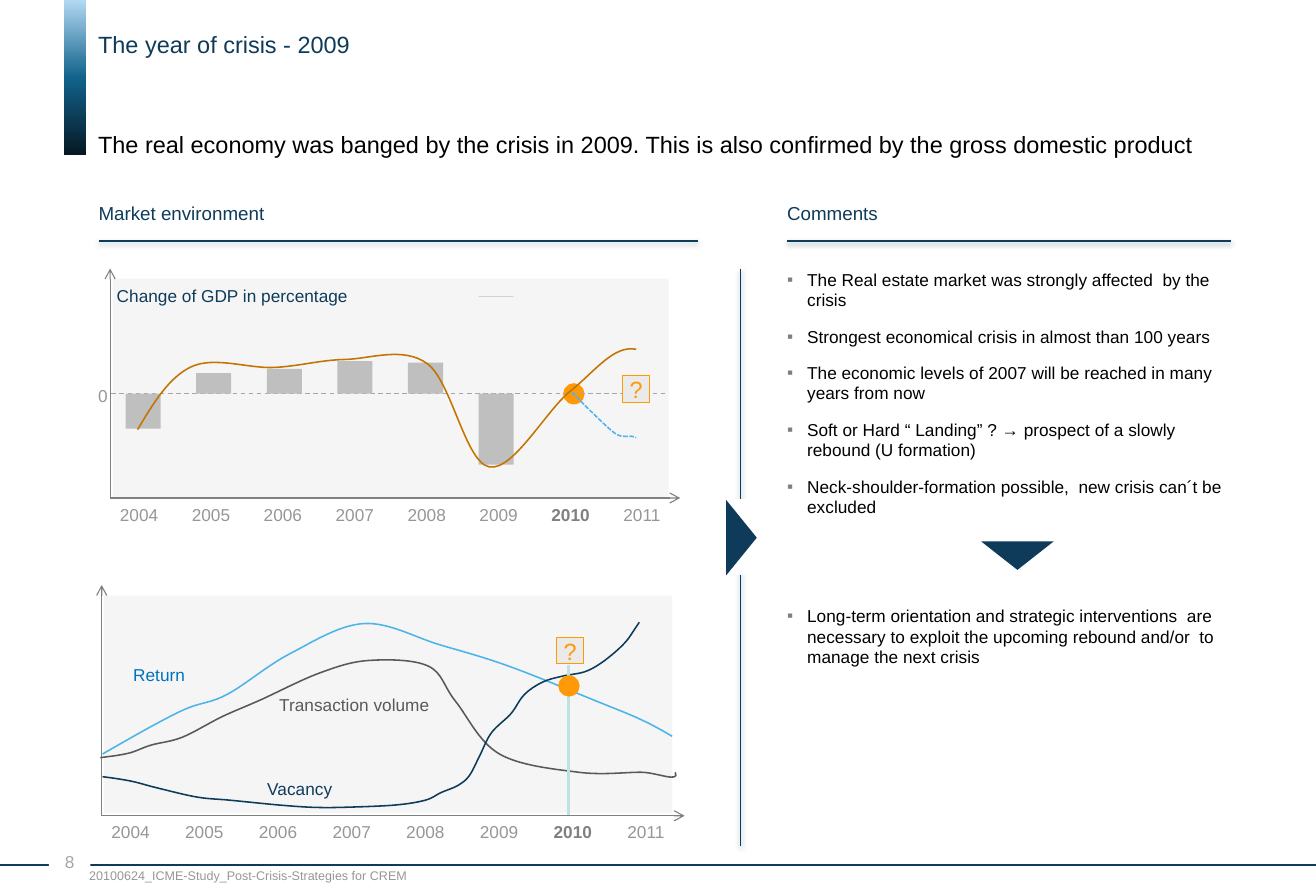
from copy import deepcopy

from lxml.etree import SubElement
from pptx import Presentation
from pptx.dml.color import RGBColor
from pptx.enum.dml import MSO_LINE
from pptx.enum.shapes import MSO_CONNECTOR, MSO_SHAPE
from pptx.enum.text import MSO_ANCHOR, PP_ALIGN
from pptx.oxml.ns import qn
from pptx.util import Cm, Pt

NAVY = RGBColor(0x0F, 0x3B, 0x5A)
BLACK = RGBColor(0, 0, 0)
WHITE = RGBColor(0xFF, 0xFF, 0xFF)
PANEL = RGBColor(0xF5, 0xF5, 0xF5)
BOX = RGBColor(0xEA, 0xEA, 0xEA)
BAR = RGBColor(0xBF, 0xBF, 0xBF)
ZERO_LINE = RGBColor(0xA6, 0xA6, 0xA6)
LABEL = RGBColor(0x96, 0x96, 0x96)
GREY = RGBColor(0x80, 0x80, 0x80)
DARK_GREY = RGBColor(0x59, 0x59, 0x59)
ORANGE = RGBColor(0xFF, 0x99, 0x05)
BROWN = RGBColor(0xC3, 0x73, 0x00)
SKY = RGBColor(0x4C, 0xB4, 0xE8)
BLUE = RGBColor(0x00, 0x72, 0xBD)
MINT = RGBColor(0xBD, 0xE3, 0xDE)
BAND = [(0, RGBColor(0xB3, 0xD8, 0xF2)), (0.5, RGBColor(0x12, 0x63, 0x8C)),
        (1, RGBColor(0x06, 0x18, 0x24))]

GDP_CHANGES = [-0.79, 0.46, 0.56, 0.73, 0.7, -1.6]
GDP_CURVE = [(3.1, 9.68), (4.32, 8.26), (6.17, 8.28), (7.77, 8.1), (9.63, 8.2),
             (11.02, 10.52), (12.85, 8.81), (14.33, 7.87)]
LANDING_CURVE = [(12.88, 8.84), (13.77, 9.7), (14.05, 9.83), (14.22, 9.83), (14.33, 9.86)]
RETURN_CURVE = [(2.31, 16.99), (4.06, 16.03), (5.11, 15.65), (6.53, 14.73), (8.2, 14.05),
                (9.91, 14.53), (11.46, 15.01), (13.44, 15.8), (14.43, 16.21), (15.14, 16.59)]
VOLUME_CURVE = [(2.26, 17.07), (2.9, 16.97), (3.4, 16.79), (4.11, 16.61), (5, 16.15),
                (5.87, 15.77), (7.21, 15.16), (8.33, 14.88), (9.65, 15.01), (10.26, 15.8),
                (11.25, 16.99), (13.03, 17.4), (14.43, 17.4), (15.21, 17.4)]
VACANCY_CURVE = [(2.31, 17.5), (2.95, 17.6), (3.53, 17.75), (4.44, 17.96), (5.18, 18.03),
                 (6.3, 18.14), (7.04, 18.19), (7.75, 18.19), (8.89, 18.14), (9.58, 18.03),
                 (9.93, 17.86), (10.31, 17.7), (10.57, 17.48), (10.8, 17.04), (11.07, 16.51),
                 (11.51, 16.08), (11.81, 15.65), (12.22, 15.37), (12.65, 15.24), (13.16, 15.14),
                 (13.51, 14.96), (13.87, 14.68), (14.12, 14.43), (14.3, 14.17), (14.4, 14.02)]
COMMENTS = [
    "The Real estate market was strongly affected  by the crisis",
    "Strongest economical crisis in almost than 100 years",
    "The economic levels of 2007 will be reached in many years from now",
    "Soft or Hard “ Landing” ? → prospect of a slowly rebound (U formation)",
    "Neck-shoulder-formation possible,  new crisis can´t be excluded",
    "Long-term orientation and strategic interventions  are necessary to exploit "
    "the upcoming rebound and/or  to manage the next crisis",
]


def bezier_segments(anchors, end_handle=None):
    def tangent(index):
        return [(b - a) / 6 for a, b in zip(anchors[index - 1], anchors[index + 1])]

    last = len(anchors) - 1
    segments = []
    for index in range(last):
        start, end = anchors[index], anchors[index + 1]
        if index + 1 < last:
            arrive = [p - t for p, t in zip(end, tangent(index + 1))]
        if index:
            leave = [p + t for p, t in zip(start, tangent(index))]
        else:
            leave = [(p + a) / 2 for p, a in zip(start, arrive)]
        if index + 1 == last:
            arrive = end_handle or [(p + a) / 2 for p, a in zip(end, leave)]
        segments.append((leave, arrive, end))
    return segments


def write_text(frame, text, size=11, color=BLACK, bold=False, align=PP_ALIGN.LEFT,
               anchor=MSO_ANCHOR.TOP, bullet=None, last_gap=5.4):
    frame.word_wrap = True
    frame.vertical_anchor = anchor
    frame.margin_left = frame.margin_right = frame.margin_top = frame.margin_bottom = 0
    lines = [text] if isinstance(text, str) else text
    for index, line in enumerate(lines):
        paragraph = frame.add_paragraph() if index else frame.paragraphs[0]
        paragraph.alignment = align
        if bullet:
            properties = paragraph._p.get_or_add_pPr()
            properties.set("marL", str(Cm(0.45)))
            properties.set("indent", str(-Cm(0.45)))
            bullet_color = SubElement(properties, qn("a:buClr"))
            SubElement(bullet_color, qn("a:srgbClr"), val=str(GREY))
            SubElement(properties, qn("a:buFont"), typeface="Arial")
            SubElement(properties, qn("a:buChar"), char=bullet)
            paragraph.space_after = Pt(4.5)
            if index:
                paragraph.space_before = Pt(last_gap if index == len(lines) - 1 else 5.4)
        run = paragraph.add_run()
        run.text = line
        run.font.name = "Arial"
        run.font.size = Pt(size)
        run.font.bold = bold
        run.font.color.rgb = color


class SlideBuilder:
    def __init__(self, slide):
        self.shapes = slide.shapes

    def text(self, left, top, width, height, text, **text_format):
        box = self.shapes.add_textbox(Cm(left), Cm(top), Cm(width), Cm(height))
        write_text(box.text_frame, text, **text_format)

    def shape(self, kind, left, top, width, height, fill, line=None, weight=0.75, rotation=0):
        shape = self.shapes.add_shape(kind, Cm(left), Cm(top), Cm(width), Cm(height))
        shape.shadow.inherit = False
        shape.rotation = rotation
        shape.fill.solid()
        shape.fill.fore_color.rgb = fill
        if line is None:
            shape.line.fill.background()
        else:
            shape.line.color.rgb = line
            shape.line.width = Pt(weight)
        return shape

    def rectangle(self, *box, **style):
        return self.shape(MSO_SHAPE.RECTANGLE, *box, **style)

    def gradient_band(self, *box):
        band = self.rectangle(*box, fill=NAVY)
        band.fill.gradient()
        band.fill.gradient_angle = 270
        stops = band._element.spPr.find(".//" + qn("a:gsLst"))
        stops.append(deepcopy(stops[0]))
        for stop, (position, color) in zip(band.fill.gradient_stops, BAND):
            stop.position = position
            stop.color.rgb = color

    def line(self, x1, y1, x2, y2, color=NAVY, weight=1, dash=None, arrow=False, shadow=False):
        line = self.shapes.add_connector(MSO_CONNECTOR.STRAIGHT, Cm(x1), Cm(y1), Cm(x2), Cm(y2))
        line.line.color.rgb = color
        line.line.width = Pt(weight)
        if dash:
            line.line.dash_style = dash
        if arrow:
            SubElement(line.line._get_or_add_ln(), qn("a:tailEnd"), type="arrow")
        effects = SubElement(line._element.spPr, qn("a:effectLst"))
        if shadow:
            outer = SubElement(effects, qn("a:outerShdw"), blurRad=str(Pt(3.1)),
                               dist=str(Pt(1.6)), dir="5400000", rotWithShape="0")
            tone = SubElement(outer, qn("a:srgbClr"), val=str(NAVY))
            SubElement(tone, qn("a:alpha"), val="38000")

    def curve(self, anchors, color, dash=None, end_handle=None):
        points = [(Cm(x), Cm(y)) for x, y in anchors]
        builder = self.shapes.build_freeform(*points[0], scale=1.0)
        builder.add_line_segments(points[1:], close=False)
        curve = builder.convert_to_shape()
        lines = curve._element.findall(".//" + qn("a:lnTo"))
        for line, segment in zip(lines, bezier_segments(anchors, end_handle)):
            bezier = SubElement(line.getparent(), qn("a:cubicBezTo"))
            for x, y in segment:
                SubElement(bezier, qn("a:pt"), x=str(Cm(x) - curve.left), y=str(Cm(y) - curve.top))
            line.getparent().remove(line)
        curve.shadow.inherit = False
        curve.fill.background()
        curve.line.color.rgb = color
        curve.line.width = Pt(1)
        if dash:
            curve.line.dash_style = dash

    def years(self, left, top, step):
        for index, year in enumerate(range(2004, 2012)):
            current = year == 2010
            self.text(left + index * step, top, 0.95, 0.48, str(year),
                      color=GREY if current else LABEL, bold=current)

    def axes(self, left, bottom, top, right):
        self.line(left, bottom, left, top, color=GREY, weight=0.75, arrow=True)
        self.line(left, bottom, right, bottom, color=GREY, weight=0.75, arrow=True)

    def turning_point(self, left, top):
        self.shape(MSO_SHAPE.FLOWCHART_CONNECTOR, left, top, 0.41, 0.41,
                   fill=ORANGE, line=ORANGE, weight=2)

    def question(self, left, top):
        box = self.rectangle(left, top, 0.6, 0.6, fill=BOX, line=ORANGE)
        write_text(box.text_frame, "?", size=15, color=ORANGE,
                   align=PP_ALIGN.CENTER, anchor=MSO_ANCHOR.MIDDLE)


def draw_frame(page):
    page.gradient_band(1.44, 0, 0.5, 3.49)
    page.line(29.64, 19.49, 0, 19.49, weight=0.75)
    page.text(2.21, 0.23, 26.67, 1.09, "The year of crisis - 2009", size=15, color=NAVY,
              anchor=MSO_ANCHOR.BOTTOM)
    page.text(2.21, 2.93, 25.9, 0.68, "The real economy was banged by the crisis in 2009. "
              "This is also confirmed by the gross domestic product", size=15)
    for left, right, heading in [(2.22, 15.72, "Market environment"), (17.73, 27.72, "Comments")]:
        page.text(left, 4.55, right - left, 0.51, heading, size=12, color=NAVY)
        page.line(left, 5.43, right, 5.43, shadow=True)
    page.line(16.68, 6.05, 16.68, 19.05, shadow=True)
    page.rectangle(16.43, 11.25, 1.17, 1.7, fill=WHITE, line=WHITE)
    page.shape(MSO_SHAPE.ISOSCELES_TRIANGLE, 15.85, 11.77, 1.7, 0.69, fill=NAVY, rotation=90)
    number = page.rectangle(1.1, 19.06, 0.94, 0.69, fill=WHITE)
    write_text(number.text_frame, "8", color=ZERO_LINE, align=PP_ALIGN.CENTER,
               anchor=MSO_ANCHOR.MIDDLE)
    page.text(2.01, 19.55, 7.4, 0.4, "20100624_ICME-Study_Post-Crisis-Strategies for CREM",
              size=8, color=LABEL)


def draw_comments(page):
    page.text(17.73, 6.06, 9.93, 9.14, COMMENTS, bullet="▪", last_gap=51.8)
    page.shape(MSO_SHAPE.ISOSCELES_TRIANGLE, 22.1, 12.2, 1.63, 0.64, fill=NAVY, rotation=180)


def draw_gdp(page):
    zero = 8.87
    page.rectangle(2.54, 6.28, 12.52, 4.92, fill=PANEL)
    page.years(2.7, 11.37, 1.62)
    page.axes(2.48, 11.22, 6.05, 15.32)
    page.text(2.63, 6.43, 12.62, 0.48, "Change of GDP in percentage", color=NAVY)
    page.turning_point(12.72, 8.67)
    page.line(2.51, zero, 15.01, zero, color=ZERO_LINE, weight=0.75, dash=MSO_LINE.DASH)
    for index, change in enumerate(GDP_CHANGES):
        page.rectangle(2.83 + index * 1.59, zero - max(change, 0), 0.79, abs(change), fill=BAR)
    page.rectangle(10.78, 6.68, 0.79, 0.01, fill=BAR)
    page.text(2.21, 8.68, 0.3, 0.48, "0", color=LABEL)
    page.question(14.03, 8.47)


def draw_market(page):
    page.rectangle(2.34, 13.42, 12.8, 4.9, fill=PANEL)
    page.text(6.29, 15.65, 3.6, 0.48, "Transaction volume", color=DARK_GREY)
    page.years(2.51, 18.51, 1.66)
    page.curve(RETURN_CURVE, SKY)
    page.text(3, 14.96, 1.3, 0.48, "Return", color=BLUE)
    page.axes(2.29, 18.38, 13.18, 15.42)
    page.curve(VOLUME_CURVE, DARK_GREY, end_handle=(15.32, 17.65))
    page.text(6.02, 17.53, 1.6, 0.48, "Vacancy", color=NAVY)
    page.curve(VACANCY_CURVE, NAVY)
    page.line(12.8, 14.99, 12.8, 18.36, color=MINT, weight=2.25)
    page.turning_point(12.61, 15.25)
    page.question(12.54, 14.36)
    page.curve(GDP_CURVE, BROWN, end_handle=(13.82, 7.77))
    page.curve(LANDING_CURVE, SKY, dash=MSO_LINE.SQUARE_DOT)


def main():
    presentation = Presentation()
    presentation.slide_width = Cm(29.64)
    presentation.slide_height = Cm(20.12)
    page = SlideBuilder(presentation.slides.add_slide(presentation.slide_layouts[6]))
    for draw in (draw_frame, draw_comments, draw_gdp, draw_market):
        draw(page)
    presentation.save("out.pptx")


if __name__ == "__main__":
    main()
